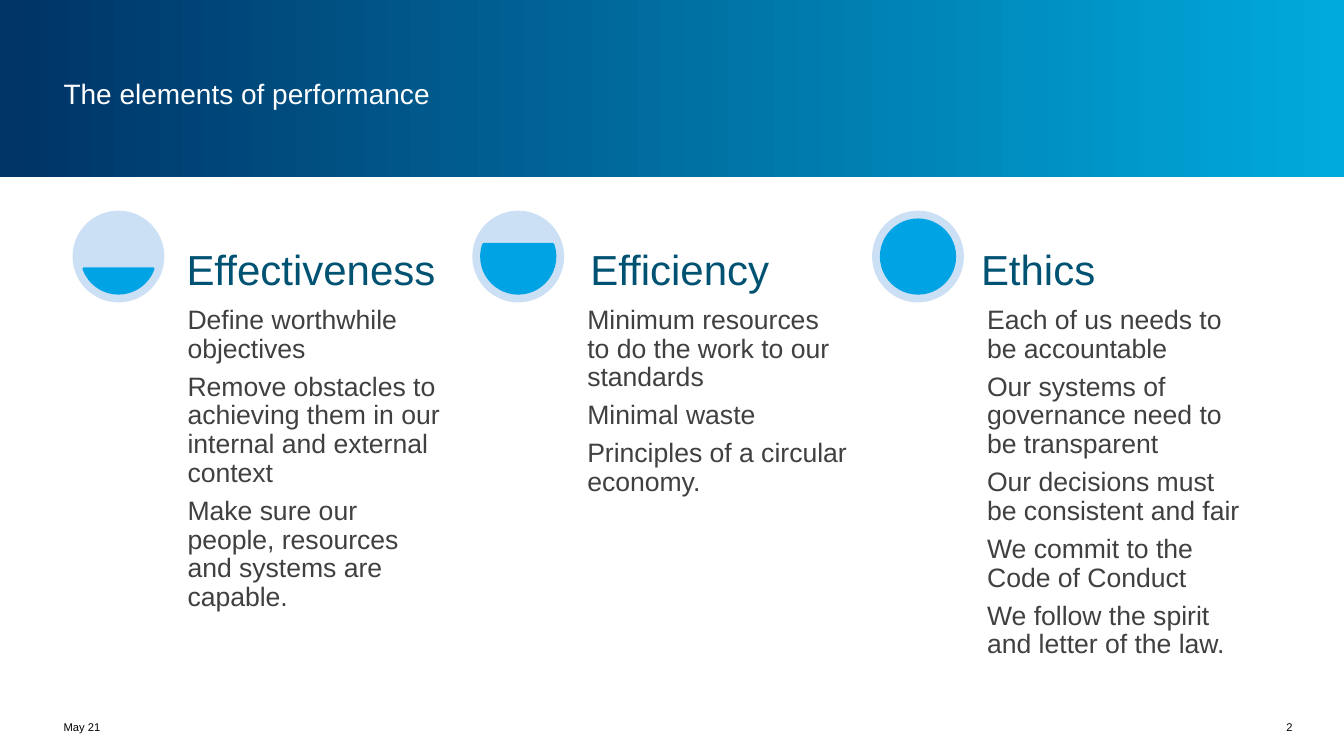
import pptx
import pptx.util
import pptx.dml.color
import pptx.enum.shapes
import pptx.enum.text

In, Pt = pptx.util.Inches, pptx.util.Pt
SHAPE = pptx.enum.shapes.MSO_SHAPE
ANCHOR = pptx.enum.text.MSO_ANCHOR
ALIGN = pptx.enum.text.PP_ALIGN

W, H = 13.33, 7.5
COLORS = {"navy": "003366", "cyan": "00AADC", "disc": "CCE0F5", "level": "00A4E4",
          "heading": "005272", "body": "404040", "white": "FFFFFF", "black": "000000"}
LEFT, TOP, PITCH, DISC = 0.72, 2.09, 3.965, 0.91
ELEMENTS = [
    ("Effectiveness", 1.05, (19.47, 160.53),
     ["Define worthwhile objectives",
      "Remove obstacles to achieving them in our internal and external context",
      "Make sure our people, resources and systems are capable."]),
    ("Efficiency", 1.09, (340.53, 199.47),
     ["Minimum resources to do the work to our standards",
      "Minimal waste",
      "Principles of a circular economy."]),
    ("Ethics", 1.0, (270, 270),
     ["Each of us needs to be accountable",
      "Our systems of governance need to be transparent",
      "Our decisions must be consistent and fair",
      "We commit to the Code of Conduct",
      "We follow the spirit and letter of the law."]),
]


def rgb(name):
    """Return the named colour."""
    return pptx.dml.color.RGBColor.from_string(COLORS[name])


def add_text(s, box, lines, size, color, inset=0.04, anchor=ANCHOR.MIDDLE, **para):
    """Add a wrapped text box with one paragraph per line."""
    tf = s.shapes.add_textbox(*map(In, box)).text_frame
    frame = {"word_wrap": True, "vertical_anchor": anchor}
    frame.update({f"margin_{side}": In(inset) for side in ("left", "top", "right", "bottom")})
    for key, value in frame.items():
        setattr(tf, key, value)
    for i, line in enumerate(lines):
        p = tf.add_paragraph() if i else tf.paragraphs[0]
        for key, value in para.items():
            setattr(p, key, value)
        r = p.add_run()
        r.text = line
        for key, value in {"name": "Arial", "size": Pt(size)}.items():
            setattr(r.font, key, value)
        r.font.color.rgb = rgb(color)


def add_solid(s, kind, box, color):
    """Add a flat shape without an outline."""
    sp = s.shapes.add_shape(kind, *map(In, box))
    sp.shadow.inherit = False
    sp.fill.solid()
    sp.fill.fore_color.rgb = rgb(color)
    sp.line.fill.background()
    return sp


def add_header(s, x, y, w, h):
    """Draw the gradient band and the slide title."""
    sp = add_solid(s, SHAPE.RECTANGLE, (x, y, w, h), "navy")
    sp.fill.gradient()
    sp.fill.gradient_angle = 0
    for stop, color, position in zip(sp.fill.gradient_stops, ("navy", "cyan"), (0, 1)):
        stop.color.rgb = rgb(color)
        stop.position = position
    add_text(s, (x + 0.59, y + 0.3, 9.97, 1.26), ["The elements of performance"], 20, "white")


def add_gauge(s, x, y, d, angles):
    """Draw a disc filled up to the chord between two angles in degrees."""
    add_solid(s, SHAPE.OVAL, (x, y, d, d), "disc")
    gap = d / 10
    sp = add_solid(s, SHAPE.CHORD, (x + gap, y + gap, d - 2 * gap, d - 2 * gap), "level")
    for i, angle in enumerate(angles):
        sp.adjustments[i] = angle * 0.6
    sp.line.color.rgb = rgb("level")
    sp.line.width = Pt(2)


def add_element(s, x, y, heading, indent, angles, points):
    """Draw one column: gauge, heading and points."""
    add_gauge(s, x, y, DISC, angles)
    add_text(s, (x + 1.09, y + 0.9, 2.68, 3.82), points, 19, "body", 0.05, ANCHOR.TOP,
             line_spacing=0.9, space_after=Pt(6.65))
    add_text(s, (x + indent, y, 2.68, DISC), [heading], 30, "heading", 0.08, ANCHOR.BOTTOM,
             line_spacing=0.9)


def add_footer(s, x, y, w, h):
    """Write the date on the left and the slide number on the right."""
    add_text(s, (x, y, 2.1, h), ["May 21"], 8, "black")
    add_text(s, (x + w - 1.05, y, 1.05, h), ["2"], 8, "black", alignment=ALIGN.RIGHT)


def main():
    """Build and save the slide."""
    prs = pptx.Presentation()
    prs.slide_width, prs.slide_height = In(W), In(H)
    s = prs.slides.add_slide(prs.slide_layouts[6])
    add_header(s, 0, 0, W, 1.76)
    for i, element in enumerate(ELEMENTS):
        add_element(s, LEFT + i * PITCH, TOP, *element)
    add_footer(s, 0.59, 7.09, 12.27, 0.24)
    prs.save("out.pptx")


if __name__ == "__main__":
    main()
